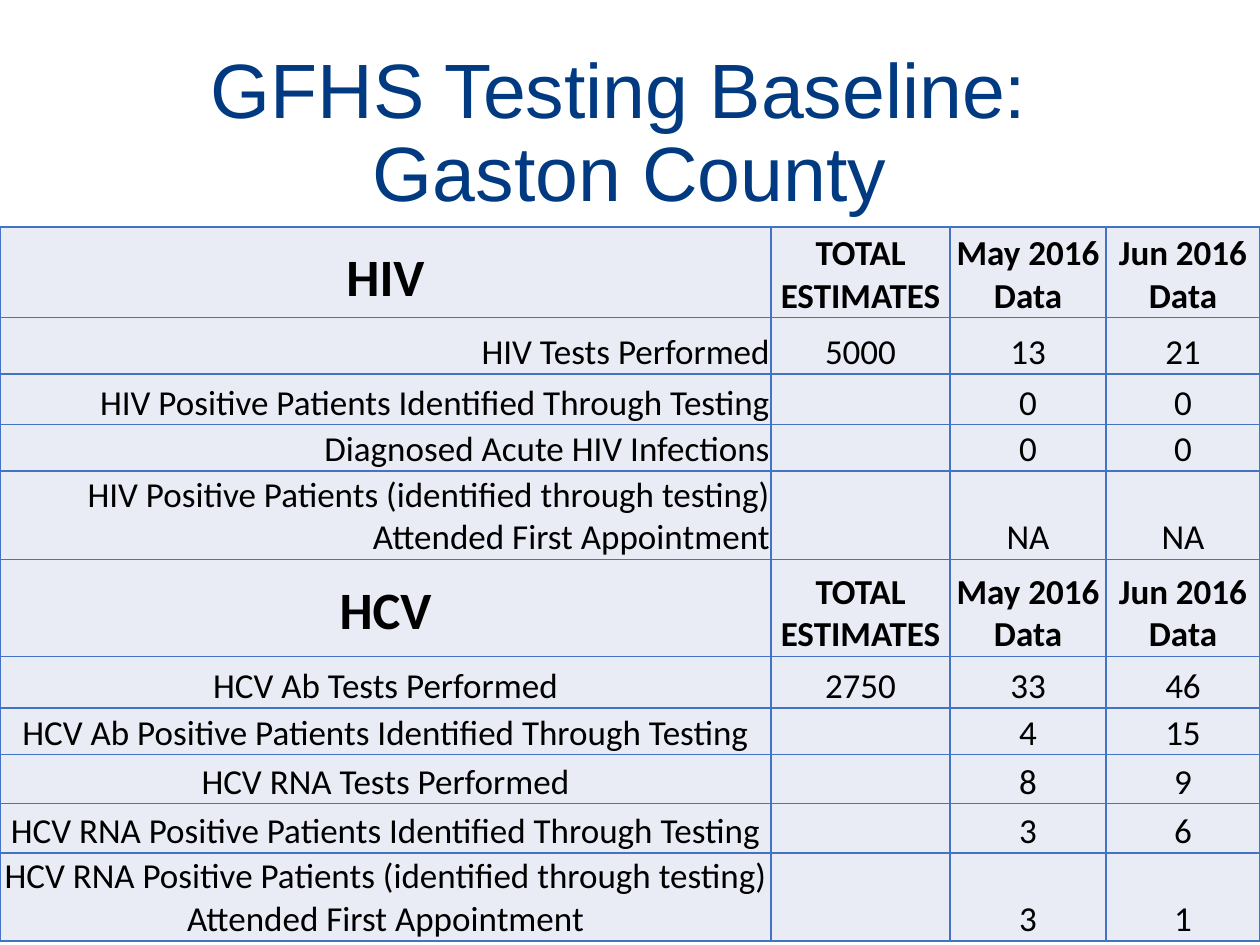
"""Build the GFHS testing baseline slide for Gaston County."""
from lxml import etree
from pptx import Presentation, dml, util as u
from pptx.dml import color
from pptx.enum import text
from pptx.oxml import ns

COLORS = {"title": "013A81", "text": "000000", "cell": "E9EBF5", "border": "4472C4"}
TITLE = "GFHS Testing Baseline: \vGaston County"
PERIODS = ("TOTAL ESTIMATES", "May 2016 Data", "Jun 2016 Data")
SECTIONS = [
    ("HIV", "RIGHT", [
        ("HIV Tests Performed", "5000", "13", "21"),
        ("HIV Positive Patients Identified Through Testing", "", "0", "0"),
        ("Diagnosed Acute HIV Infections", "", "0", "0"),
        ("HIV Positive Patients (identified through testing) Attended First Appointment",
         "", "NA", "NA"),
    ]),
    ("HCV", "CENTER", [
        ("HCV Ab Tests Performed", "2750", "33", "46"),
        ("HCV Ab Positive Patients Identified Through Testing", "", "4", "15"),
        ("HCV RNA Tests Performed", "", "8", "9"),
        ("HCV RNA Positive Patients Identified Through Testing", "", "3", "6"),
        ("HCV RNA Positive Patients (identified through testing) Attended First Appointment",
         "", "3", "1"),
    ]),
]
COLUMN_WIDTHS = (6.12, 1.42, 1.24, 1.22)
ROW_HEIGHTS = (0.72, 0.45, 0.4, 0.37, 0.7, 0.77, 0.41, 0.37, 0.39, 0.39, 0.7)


def write(frame, content, size=20, font="Calibri", ink="text", bold=False,
          align="CENTER", spacing=None):
    paragraph = frame.paragraphs[0]
    paragraph.text = content
    paragraph.alignment = text.PP_ALIGN[align]
    paragraph.line_spacing = spacing
    for run in paragraph.runs:
        run.font.size = u.Pt(size)
        run.font.name = font
        run.font.bold = bold
        run.font.color.rgb = color.RGBColor.from_string(COLORS[ink])


def draw_borders(cell):
    properties = cell._tc.get_or_add_tcPr()
    for position, side in enumerate(("lnL", "lnR", "lnT", "lnB")):
        line = etree.Element(ns.qn(f"a:{side}"), w=str(u.Pt(1)))
        fill = etree.SubElement(line, ns.qn("a:solidFill"))
        etree.SubElement(fill, ns.qn("a:srgbClr"), val=COLORS["border"])
        properties.insert(position, line)


def fill_cell(cell, content, heading=False, **style):
    cell.margin_left = cell.margin_right = u.Inches(0.01)
    cell.margin_top = u.Inches(0.16 if heading else 0.01)
    cell.margin_bottom = 0
    cell.vertical_anchor = text.MSO_ANCHOR.TOP if heading else text.MSO_ANCHOR.BOTTOM
    cell.fill.solid()
    cell.fill.fore_color.rgb = color.RGBColor.from_string(COLORS["cell"])
    draw_borders(cell)
    write(cell.text_frame, content, **style)


def add_title(slide):
    title = slide.shapes.add_textbox(0, u.Inches(0.35), u.Inches(10), u.Inches(1.45))
    title.text_frame.word_wrap = True
    title.text_frame.vertical_anchor = text.MSO_ANCHOR.MIDDLE
    write(title.text_frame, TITLE, size=44, font="Arial", ink="title", spacing=0.9)


def add_results(slide):
    results = slide.shapes.add_table(
        len(ROW_HEIGHTS), len(COLUMN_WIDTHS), 0, u.Inches(1.8),
        u.Inches(sum(COLUMN_WIDTHS)), u.Inches(sum(ROW_HEIGHTS))).table
    results.first_row = results.horz_banding = False
    for column, width in zip(results.columns, COLUMN_WIDTHS):
        column.width = u.Inches(width)
    for row, height in zip(results.rows, ROW_HEIGHTS):
        row.height = u.Inches(height)

    rows = iter(results.rows)
    for disease, label_align, measures in SECTIONS:
        heading, *period_cells = next(rows).cells
        fill_cell(heading, disease, heading=True, size=30, bold=True)
        for cell, period in zip(period_cells, PERIODS):
            fill_cell(cell, period, bold=True)
        for label, *counts in measures:
            label_cell, *count_cells = next(rows).cells
            fill_cell(label_cell, label, align=label_align)
            for cell, count in zip(count_cells, counts):
                fill_cell(cell, count)


def main():
    deck = Presentation()
    deck.slide_width, deck.slide_height = u.Inches(10), u.Inches(7.5)
    slide = deck.slides.add_slide(deck.slide_layouts[6])
    add_title(slide)
    add_results(slide)
    deck.save("out.pptx")


if __name__ == "__main__":
    main()
